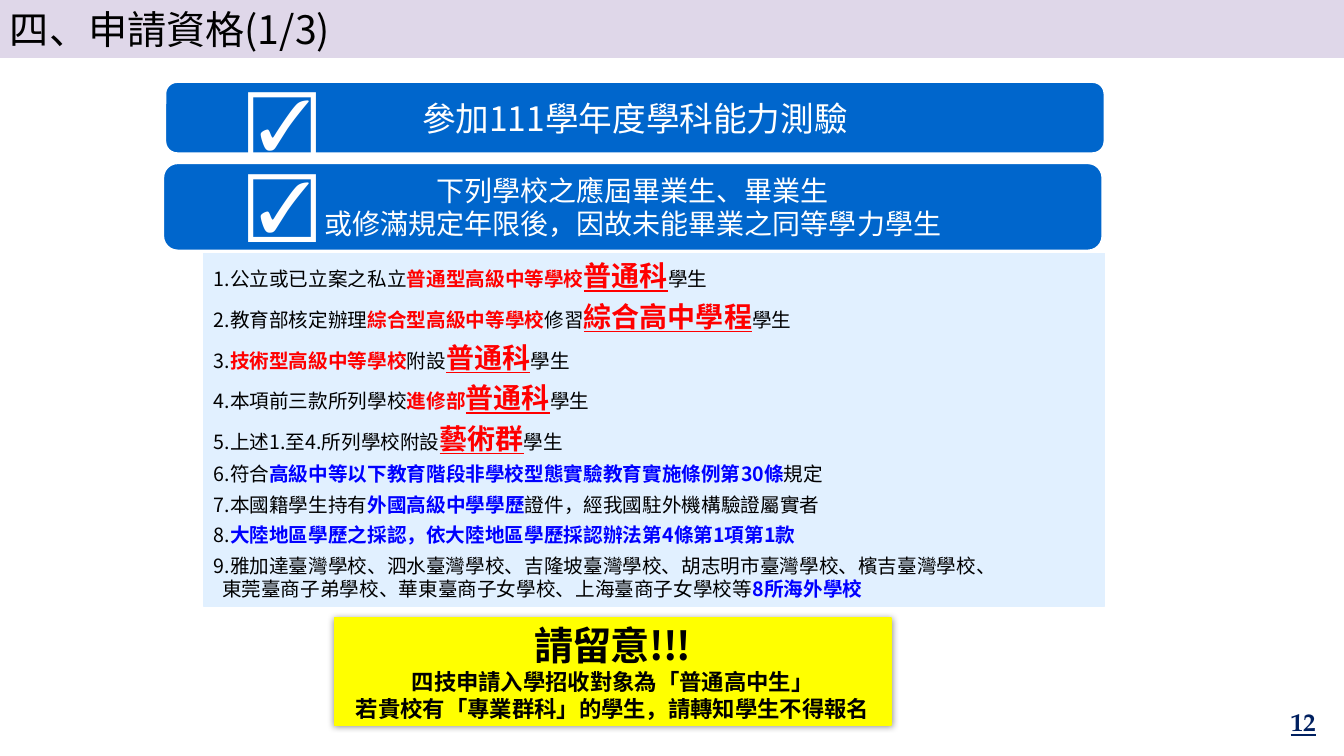
from dataclasses import dataclass
from typing import NamedTuple

import lxml.etree
import pptx
import pptx.dml.color
import pptx.enum.shapes
import pptx.enum.text
import pptx.oxml.ns
import pptx.util

Pt = pptx.util.Pt
qn = pptx.oxml.ns.qn
SHAPES = pptx.enum.shapes.MSO_SHAPE
ALIGN = pptx.enum.text.PP_ALIGN
ANCHOR = pptx.enum.text.MSO_ANCHOR

COLORS = {
    "lilac": "DFD7E9", "blue": "0066CC", "pale": "E1F0FF", "yellow": "FFFF00",
    "white": "FFFFFF", "black": "000000", "red": "FF0000",
    "link": "0000FF", "navy": "002060",
}
JP, SC, SERIF = "Noto Sans CJK JP", "Noto Sans CJK SC", "TeX Gyre Pagella"


class Box(NamedTuple):
    left: float
    top: float
    width: float
    height: float


class Style(NamedTuple):
    font: str
    size: float
    color: str = "black"
    bold: bool = False
    underline: bool = False
    spacing: float = 0


class Run(NamedTuple):
    text: str
    style: Style


@dataclass
class Line:
    runs: list[Run]
    align: ALIGN = ALIGN.LEFT
    before: float = 0
    after: float = 0
    hanging: float = 0


@dataclass
class Panel:
    box: Box
    fill: str
    border: str
    border_width: float
    lines: list[Line]
    kind: SHAPES = SHAPES.RECTANGLE


def rgb(name: str) -> pptx.dml.color.RGBColor:
    return pptx.dml.color.RGBColor.from_string(COLORS[name])


def set_font(font, props, style: Style) -> None:
    font.size = Pt(style.size)
    font.bold = style.bold
    font.underline = style.underline
    font.color.rgb = rgb(style.color)
    font.name = style.font
    east_asian = lxml.etree.Element(qn("a:ea"), typeface=style.font)
    props.find(qn("a:latin")).addnext(east_asian)
    if style.spacing:
        props.set("spc", str(round(style.spacing * 100)))


def write(frame, lines: list[Line], anchor: ANCHOR) -> None:
    frame.word_wrap = True
    frame.vertical_anchor = anchor
    for index, line in enumerate(lines):
        paragraph = frame.paragraphs[0] if index == 0 else frame.add_paragraph()
        paragraph.alignment = line.align
        paragraph.space_before = Pt(line.before if index else 0)
        paragraph.space_after = Pt(line.after)
        props = paragraph._p.get_or_add_pPr()
        if line.hanging:
            props.set("marL", str(Pt(line.hanging)))
            props.set("indent", str(-Pt(line.hanging)))
        uniform = len({run.style for run in line.runs}) == 1
        if uniform:
            font = paragraph.font
            set_font(font, props.find(qn("a:defRPr")), line.runs[0].style)
        for text, style in line.runs:
            for part_index, part in enumerate(text.split("\n")):
                if part_index:
                    paragraph.add_line_break()
                run = paragraph.add_run()
                run.text = part
                if not uniform:
                    set_font(run.font, run._r.get_or_add_rPr(), style)


def draw_panel(slide, panel: Panel):
    shape = slide.shapes.add_shape(panel.kind, *map(Pt, panel.box))
    shape.shadow.inherit = False
    shape.fill.solid()
    shape.fill.fore_color.rgb = rgb(panel.fill)
    shape.line.color.rgb = rgb(panel.border)
    shape.line.width = Pt(panel.border_width)
    write(shape.text_frame, panel.lines, ANCHOR.MIDDLE)
    return shape


def draw_text(slide, box: Box, line: Line, anchor: ANCHOR) -> None:
    frame = slide.shapes.add_textbox(*map(Pt, box)).text_frame
    write(frame, [line], anchor)


def draw_banner(slide, box: Box, size: float, texts: list[str], check_top: float) -> None:
    style = Style(JP, size, "white")
    lines = [Line([Run(text, style)], ALIGN.CENTER) for text in texts]
    draw_panel(slide, Panel(box, "blue", "white", 1.5, lines, SHAPES.ROUNDED_RECTANGLE))
    check = Line([Run("☑", Style(SERIF, 50, "white", True))])
    draw_text(slide, Box(170, check_top, 58, 68), check, ANCHOR.TOP)


def add_glow(shape) -> None:
    effects = shape._element.spPr.find(qn("a:effectLst"))
    shadow = lxml.etree.SubElement(effects, qn("a:outerShdw"), blurRad=str(Pt(5)), dist="0", dir="0")
    color = lxml.etree.SubElement(shadow, qn("a:srgbClr"), val=COLORS["black"])
    lxml.etree.SubElement(color, qn("a:alpha"), val="40000")


# Eligible schools
PLAIN = Style(SC, 14)
RED = Style(SC, 14, "red", True)
KEY = Style(SC, 20, "red", True, True)
BLUE = Style(SC, 14, "link", True)
STUDENTS = Run("學生", PLAIN)
GENERAL = Run("普通科", KEY)

SCHOOLS = [
    [Run("1.公立或已立案之私立", PLAIN), Run("普通型高級中等學校", RED), GENERAL, STUDENTS],
    [Run("2.教育部核定辦理", PLAIN), Run("綜合型高級中等學校", RED), Run("修習", PLAIN),
     Run("綜合高中學程", KEY), STUDENTS],
    [Run("3.", PLAIN), Run("技術型高級中等學校", RED), Run("附設", PLAIN), GENERAL, STUDENTS],
    [Run("4.本項前三款所列學校", PLAIN), Run("進修部", RED), GENERAL, STUDENTS],
    [Run("5.上述1.至4.所列學校附設", PLAIN), Run("藝術群", KEY), STUDENTS],
    [Run("6.符合", PLAIN), Run("高級中等以下教育階段非學校型態實驗教育實施條例第30條", BLUE),
     Run("規定", PLAIN)],
    [Run("7.本國籍學生持有", PLAIN), Run("外國高級中學學歷", BLUE),
     Run("證件，經我國駐外機構驗證屬實者", PLAIN)],
    [Run("8.", PLAIN), Run("大陸地區學歷之採認，依大陸地區學歷採認辦法第4條第1項第1款", BLUE)],
    [Run("9.雅加達臺灣學校、泗水臺灣學校、吉隆坡臺灣學校、胡志明市臺灣學校、檳吉臺灣學校、\n"
         "東莞臺商子弟學校、華東臺商子女學校、上海臺商子女學校等", PLAIN),
     Run("8所海外學校", BLUE)],
]
NOTICE = [
    Run("請留意!!!", Style(SC, 28, bold=True, spacing=-0.8)),
    Run("四技申請入學招收對象為「普通高中生」", Style(SC, 16, bold=True)),
    Run("若貴校有「專業群科」的學生，請轉知學生不得報名", Style(SC, 16, bold=True)),
]


def main() -> None:
    deck = pptx.Presentation()
    deck.slide_width, deck.slide_height = Pt(960), Pt(540)
    slide = deck.slides.add_slide(deck.slide_layouts[6])

    # Title bar
    title = Line([Run("四、申請資格(1/3)", Style(JP, 28))])
    draw_panel(slide, Panel(Box(0, 0, 960, 41), "lilac", "lilac", 1, [title]))

    # First requirement
    draw_banner(slide, Box(118, 58.5, 671, 51), 24, ["參加111學年度學科能力測驗"], 51)

    # School list
    schools = [Line(runs, before=2, after=3, hanging=6) for runs in SCHOOLS]
    draw_panel(slide, Panel(Box(145.5, 181, 643.5, 252), "pale", "pale", 1, schools))

    # Notice
    notice = [Line([run], ALIGN.CENTER) for run in NOTICE]
    add_glow(draw_panel(slide, Panel(Box(239, 441.5, 397.5, 76.5), "yellow", "yellow", 1, notice)))

    # Second requirement
    draw_banner(slide, Box(116.5, 116.5, 671, 62.5), 20,
                ["下列學校之應屆畢業生、畢業生", "或修滿規定年限後，因故未能畢業之同等學力學生"], 110)

    # Page number
    number = Line([Run("12", Style(SERIF, 18, "navy", True, True))], ALIGN.RIGHT)
    draw_text(slide, Box(731, 500.5, 216, 29), number, ANCHOR.MIDDLE)

    deck.save("out.pptx")


if __name__ == "__main__":
    main()
